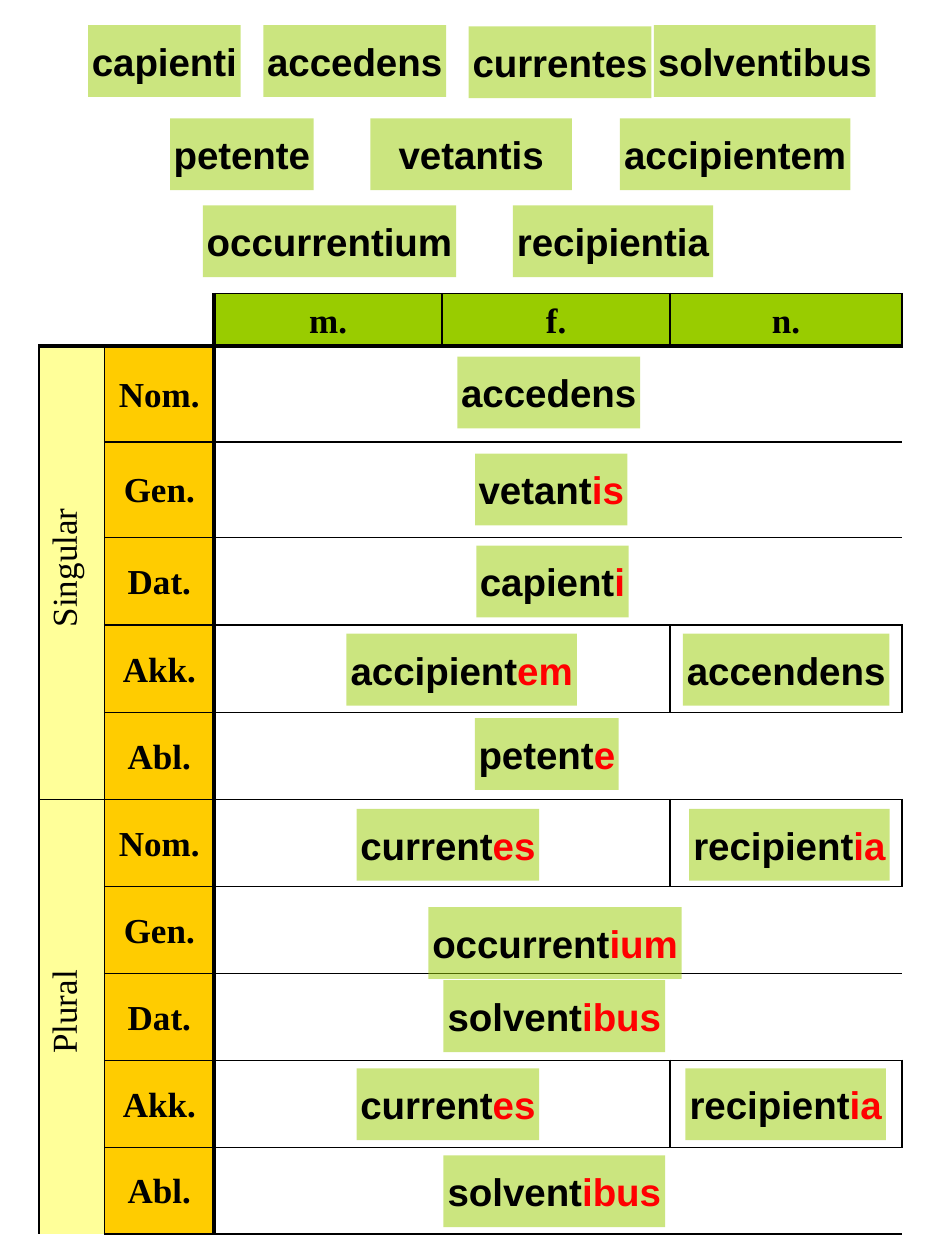
from lxml.etree import SubElement as Sub
from pptx import Presentation
from pptx.dml.color import RGBColor as RGB
from pptx.enum.shapes import MSO_SHAPE as Shape
from pptx.enum.text import MSO_ANCHOR as Anchor, MSO_AUTO_SIZE as Auto, PP_ALIGN as Align
from pptx.oxml.ns import qn
from pptx.util import Pt

PX = 9144  # 100 px to the inch
HUE = {"ink": "000000", "end": "FF0000", "head": "99CC00",
       "case": "FFCC00", "side": "FFFF99"}
WIDE = {"capienti": 121, "accedens": 145, "currentes": 145, "solventibus": 176,
        "petente": 114, "vetantis": 121, "accipientem": 183,
        "occurrentium": 201, "recipientia": 159, "accendens": 164}
BANK = [("capienti", 0, 0), ("accedens", 139, 0), ("currentes", 302, 1),
        ("solventibus", 449, 0), ("petente", 65, 74), ("vetantis", 224, 74, 160),
        ("accipientem", 422, 74), ("occurrentium", 91, 143), ("recipientia", 337, 143)]
KEYS = [("accedens", 332, 50), ("vetant|is", 346, 127), ("capient|i", 347, 200),
        ("accipient|em", 244, 270), ("accendens", 511, 270), ("petent|e", 346, 337),
        ("current|es", 252, 409), ("recipient|ia", 516, 409),
        ("occurrent|ium", 309, 487), ("solvent|ibus", 321, 545),
        ("current|es", 252, 615), ("recipient|ia", 513, 615),
        ("solvent|ibus", 321, 684)]
COLS = [52, 87, 181, 181, 184]
ROWS = [40, 76, 76] + [69.5] * 2 + [69] * 6
CASES = ["Nom.", "Gen.", "Dat.", "Akk.", "Abl."]
SPLIT = {4, 6, 9}


def px(num):
    """Turn px into EMU."""
    return round(num * PX)


def write(frame, text, font="Arial", size=22, bold=True, gap=None):
    """Write centred text whose part after a bar is the coloured ending."""
    para = frame.paragraphs[0]
    para.alignment = Align.CENTER
    if gap:
        para.line_spacing = gap
    for part, hue in zip(text.split("|"), ("ink", "end")):
        run = para.add_run()
        run.text = part
        run.font.name, run.font.size, run.font.bold = font, Pt(size), bold
        run.font.color.rgb = RGB.from_string(HUE[hue])
    return para


def card(slide, left, top, text, wide=None):
    """Draw one half-clear word card."""
    width = wide or WIDE[text.replace("|", "")]
    box = slide.shapes.add_shape(Shape.RECTANGLE, px(left), px(top), px(width), px(57))
    box.shadow.inherit = False
    box.line.fill.background()
    box.fill.solid()
    box.fill.fore_color.rgb = RGB.from_string(HUE["head"])
    tint = box.fill._xPr.find(qn("a:solidFill"))[0]
    Sub(tint, qn("a:alpha"), val="50000")
    frame = box.text_frame
    frame.margin_left = frame.margin_right = px(2)
    frame.margin_top = frame.margin_bottom = px(10)
    frame.word_wrap = wide is not None
    frame.auto_size = Auto.SHAPE_TO_FIT_TEXT
    write(frame, text)


def cards(slide, left, top, words):
    """Place a set of word cards from the corner of its region."""
    for text, x, y, *wide in words:
        card(slide, left + x, top + y, text, *wide)


def edge(cell, tag, width):
    """Set one border of a cell, or clear it when the width is zero."""
    line = Sub(cell._tc.get_or_add_tcPr(), qn("a:" + tag), w=str(Pt(width)))
    if width:
        Sub(Sub(line, qn("a:solidFill")), qn("a:srgbClr"), val=HUE["ink"])
    else:
        Sub(line, qn("a:noFill"))


def block(table, row, col, high=1, wide=1, text="", hue=None, turn=False):
    """Merge a block of cells, rule its outer edges and fill it."""
    last, end = row + high - 1, col + wide - 1
    corner = row == col == 0
    for r in range(row, last + 1):
        for c in range(col, end + 1):
            cell = table.cell(r, c)
            edge(cell, "lnL", 0 if corner or c > col else 2.25 if c == 2 else 1)
            edge(cell, "lnR", 0 if c < end else 2.25 if c == 1 else 1)
            edge(cell, "lnT", 0 if corner or r > row else 2.25 if r == 1 else 1)
            edge(cell, "lnB", 0 if r < last else 2.25 if r == 0 else 1)
            if hue:
                cell.fill.solid()
                cell.fill.fore_color.rgb = RGB.from_string(HUE[hue])
            else:
                cell.fill.background()
    cell = table.cell(row, col)
    if high * wide > 1:
        cell.merge(table.cell(last, end))
    if text:
        cell.vertical_anchor = Anchor.MIDDLE
        cell.margin_left = cell.margin_right = px(6)
        cell.margin_top = cell.margin_bottom = px(3)
        para = write(cell.text_frame, text, "Times New Roman", 20, not turn, 1.07)
        if turn:
            cell._tc.tcPr.set("vert", "vert270")
            para._p.get_or_add_pPr().set("marL", str(px(8)))


def grid(slide, left, top):
    """Draw the declension table."""
    table = slide.shapes.add_table(len(ROWS), len(COLS), px(left), px(top),
                                   px(sum(COLS)), px(sum(ROWS))).table
    table.first_row = table.horz_banding = False
    for col, width in zip(table.columns, COLS):
        col.width = px(width)
    for row, height in zip(table.rows, ROWS):
        row.height = px(height)
    block(table, 0, 0, wide=2)
    for col, text in enumerate(["m.", "f.", "n."], 2):
        block(table, 0, col, text=text, hue="head")
    for row, text in ((1, "Singular"), (6, "Plural")):
        block(table, row, 0, high=5, text=text, hue="side", turn=True)
    for row, text in enumerate(CASES * 2, 1):
        block(table, row, 1, text=text, hue="case")
        block(table, row, 2, wide=2 if row in SPLIT else 3)
        if row in SPLIT:
            block(table, row, 4)


def main():
    """Build the slide and save it."""
    deck = Presentation()
    deck.slide_width, deck.slide_height = px(750), px(1000)
    slide = deck.slides.add_slide(deck.slide_layouts[6])
    cards(slide, 70, 20, BANK)
    grid(slide, 31, 233)
    cards(slide, 31, 233, KEYS)
    deck.save("out.pptx")


if __name__ == "__main__":
    main()
